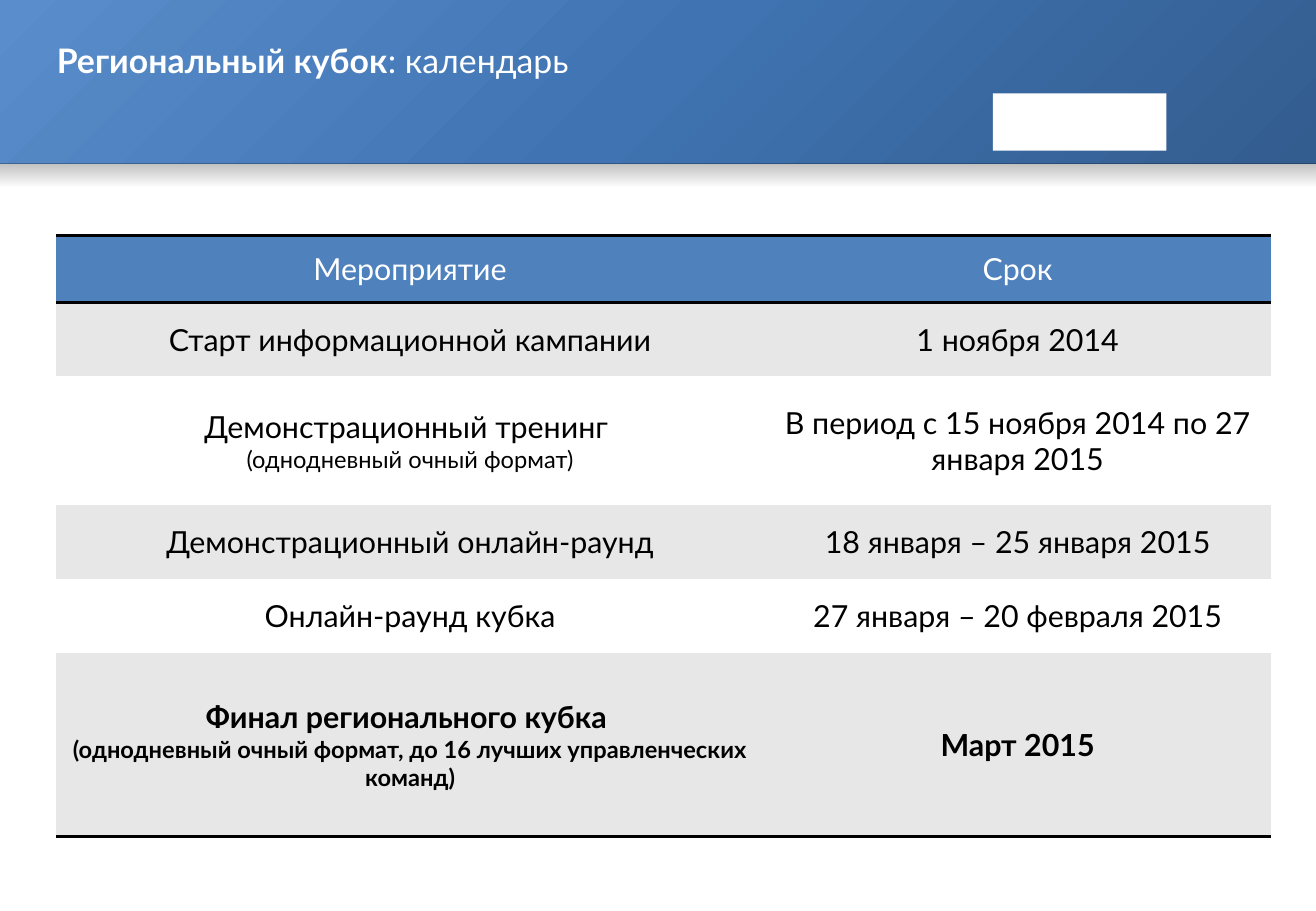
from lxml import etree
from pptx import Presentation
from pptx.dml.color import RGBColor
from pptx.enum.shapes import MSO_SHAPE
from pptx.enum.text import MSO_ANCHOR, PP_ALIGN
from pptx.oxml import parse_xml
from pptx.oxml.ns import qn
from pptx.util import Inches, Pt

RECTANGLE = MSO_SHAPE.RECTANGLE
TOP, MIDDLE = MSO_ANCHOR.TOP, MSO_ANCHOR.MIDDLE
CENTER = PP_ALIGN.CENTER
DRAWING_NS = "http://schemas.openxmlformats.org/drawingml/2006/main"
NO_TABLE_STYLE = "{2D5ABB26-0587-4C30-8999-92F81FD0307C}"

WHITE, BLACK, BLUE, GREY = "FFFFFF", "000000", "4F81BD", "E7E7E7"
BODY_SIZE, NOTE_SIZE, TITLE_SIZE = 18, 14, 20

# Each row: height in percent, lines of the event, date
HEADING = (7.33, ["Мероприятие"], "Срок")
EVENTS = [
    (8.13, ["Старт информационной кампании"], "1 ноября 2014"),
    (14.13, ["Демонстрационный тренинг ", "(однодневный очный формат)"],
     "В период с 15 ноября 2014 по 27 января 2015"),
    (8.13, ["Демонстрационный онлайн-раунд"], "18 января – 25 января 2015"),
    (8.13, ["Онлайн-раунд кубка"], "27 января – 20 февраля 2015"),
    (20.13, ["Финал регионального кубка ",
             "(однодневный очный формат, до 16 лучших управленческих команд)"],
     "Март 2015"),
]


def color(hex_value):
    return RGBColor.from_string(hex_value)


class CalendarSlide:
    """Draws on one slide; all lengths are percent of the slide's size."""

    font_name = "Lato"

    def __init__(self, deck):
        self.deck = deck
        self.slide = deck.slides.add_slide(deck.slide_layouts[6])

    def across(self, percent):
        return round(self.deck.slide_width * percent / 100)

    def down(self, percent):
        return round(self.deck.slide_height * percent / 100)

    def box(self, left, top, width, height):
        return (self.across(left), self.down(top),
                self.across(width), self.down(height))

    def rectangle(self, *place):
        shape = self.slide.shapes.add_shape(RECTANGLE, *self.box(*place))
        shape.shadow.inherit = False
        shape.line.fill.background()
        shape.fill.solid()
        shape.fill.fore_color.rgb = color(WHITE)
        return shape

    def gradient(self, place, stops, angle):
        """Stops are (position, colour, opacity); angle runs clockwise."""
        fill = etree.Element(qn("a:gradFill"), rotWithShape="1")
        stop_list = etree.SubElement(fill, qn("a:gsLst"))
        for position, hex_value, opacity in stops:
            stop = etree.SubElement(stop_list, qn("a:gs"), pos=str(position * 1000))
            tint = etree.SubElement(stop, qn("a:srgbClr"), val=hex_value)
            etree.SubElement(tint, qn("a:alpha"), val=str(opacity * 1000))
        etree.SubElement(fill, qn("a:lin"), ang=str(angle * 60000), scaled="0")
        properties = self.rectangle(*place)._element.spPr
        properties.replace(properties.find(qn("a:solidFill")), fill)

    def add_text(self, paragraph, text, hex_value, **formats):
        run = paragraph.add_run()
        run.text = text
        run.font.color.rgb = color(hex_value)
        for name, value in {"name": self.font_name, **formats}.items():
            setattr(run.font, name, value)

    def title(self, place, strong, rest):
        frame = self.slide.shapes.add_textbox(*self.box(*place)).text_frame
        frame.word_wrap = True
        frame.vertical_anchor = TOP
        paragraph = frame.paragraphs[0]
        paragraph.line_spacing = 0.9
        paragraph._p.get_or_add_pPr().set("marL", str(Inches(0.38)))
        for text, bold in ((strong, True), (rest, False)):
            self.add_text(paragraph, text, WHITE, size=Pt(TITLE_SIZE), bold=bold)

    def cell(self, cell, lines, fill, ink, bold, rules):
        cell.vertical_anchor = MIDDLE
        cell.fill.solid()
        cell.fill.fore_color.rgb = color(fill)
        for index, text in enumerate(lines):
            frame = cell.text_frame
            paragraph = frame.add_paragraph() if index else frame.paragraphs[0]
            paragraph.alignment = CENTER
            size = NOTE_SIZE if index else BODY_SIZE
            self.add_text(paragraph, text, ink, size=Pt(size), bold=bold)
        for index, side in enumerate(rules):
            cell._tc.get_or_add_tcPr().insert(index, parse_xml(
                f'<a:ln{side} xmlns:a="{DRAWING_NS}" w="{Pt(2)}"><a:solidFill>'
                f'<a:srgbClr val="{BLACK}"/></a:solidFill></a:ln{side}>'))

    def calendar(self, left, top, widths, heading, events):
        rows = [heading, *events]
        place = self.box(left, top, sum(widths), sum(row[0] for row in rows))
        frame = self.slide.shapes.add_table(len(rows), len(widths), *place)
        table = frame.table
        table._tbl.tblPr.find(qn("a:tableStyleId")).text = NO_TABLE_STYLE
        for column, width in zip(table.columns, widths):
            column.width = self.across(width)
        last = len(events)
        for number, (height, event, date) in enumerate(rows):
            table.rows[number].height = self.down(height)
            fill = GREY if number % 2 else WHITE
            ink, rules = BLACK, "B" if number == last else ""
            if number == 0:
                fill, ink, rules = BLUE, WHITE, "TB"
            for column, lines in enumerate((event, [date])):
                self.cell(table.cell(number, column), lines, fill, ink,
                          number == last, rules)


def main():
    deck = Presentation()
    deck.slide_width, deck.slide_height = Inches(10.83), Inches(7.5)
    page = CalendarSlide(deck)
    page.gradient((0, 0, 100, 18),
                  [(0, "335D8F", 100), (50, "3F73B1", 100), (100, "598DCB", 100)], 225)
    page.gradient((0, 18, 100, 2.53), [(0, BLACK, 26), (100, BLACK, 0)], 90)
    page.rectangle(75.44, 10.27, 13.2, 6.27)
    page.title((-0.09, 4.27, 84.2, 10.27), "Региональный кубок", ": календарь")
    page.calendar(4.25, 25.87, (53.83, 38.5), HEADING, EVENTS)
    deck.save("out.pptx")


if __name__ == "__main__":
    main()
